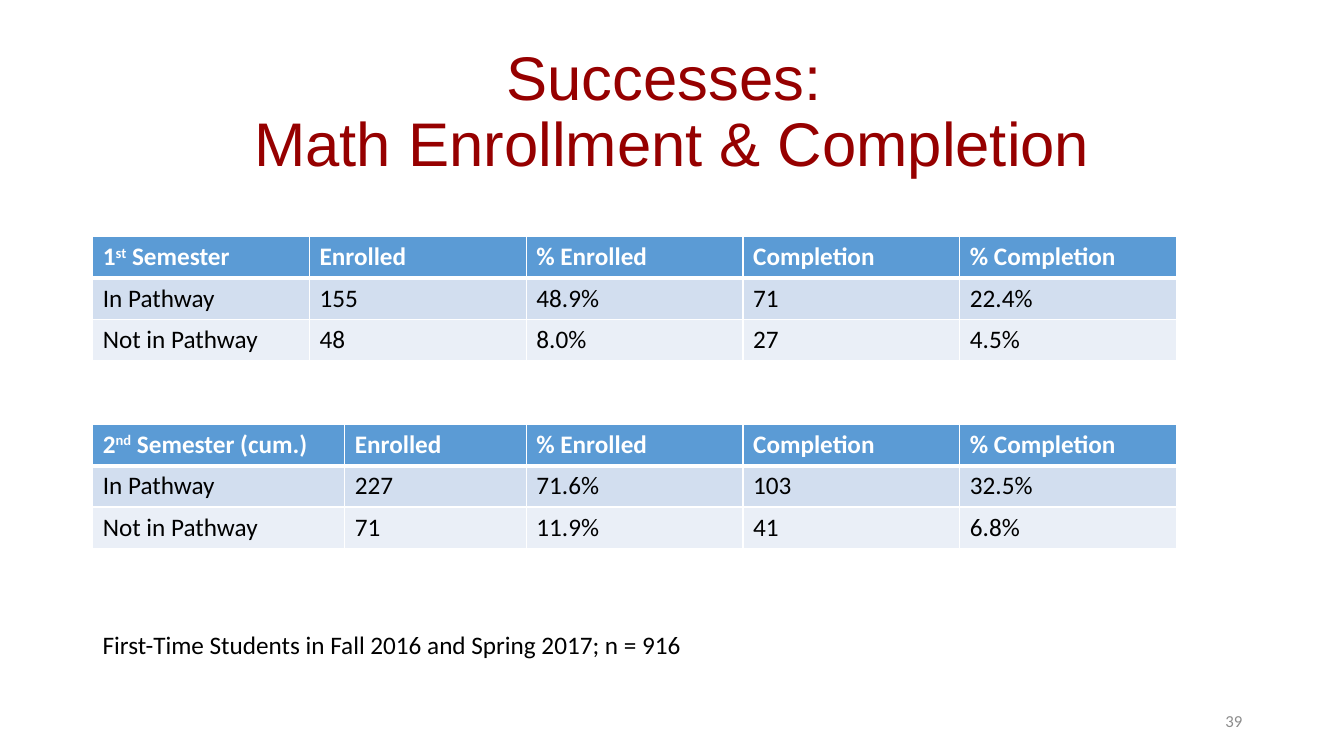
from dataclasses import dataclass

from lxml import etree
from pptx import Presentation
from pptx.dml.color import RGBColor
from pptx.enum import text
from pptx.oxml import ns
from pptx.util import Inches, Pt

COLORS = {
    "title": "960000",
    "head": "5B9BD5",
    "odd": "D2DEEF",
    "even": "EAEFF7",
    "white": "FFFFFF",
    "black": "000000",
    "gray": "8C8C8C",
}
LEFT = 0.92
ROW = 0.41
HEADS = ["Enrolled", "% Enrolled", "Completion", "% Completion"]


@dataclass
class Term:
    label: str
    top: float
    widths: list[float]
    inside: list[str]
    outside: list[str]


@dataclass
class Note:
    words: str
    left: float
    top: float
    width: float
    size: int
    color: str
    align: text.PP_ALIGN
    anchor: text.MSO_ANCHOR


TERMS = [
    Term("1|st| Semester", 2.35, [2.15] * 5,
         ["155", "48.9%", "71", "22.4%"], ["48", "8.0%", "27", "4.5%"]),
    Term("2|nd| Semester (cum.)", 4.21, [2.5, 1.8] + [2.15] * 3,
         ["227", "71.6%", "103", "32.5%"], ["71", "11.9%", "41", "6.8%"]),
]
NOTES = [
    Note("39", 9.42, 6.95, 3, 12, "gray",
         text.PP_ALIGN.RIGHT, text.MSO_ANCHOR.MIDDLE),
    Note("First-Time Students in Fall 2016 and Spring 2017; n = 916",
         LEFT, 6.19, 10.24, 18, "black",
         text.PP_ALIGN.LEFT, text.MSO_ANCHOR.TOP),
]


def style(font, size: int, color: str, name: str = "Calibri", bold: bool = False) -> None:
    font.size = Pt(size)
    font.name = name
    font.bold = bold
    font.color.rgb = RGBColor.from_string(COLORS[color])


def add_edge(cell, side: str, width: float) -> None:
    props = cell._tc.get_or_add_tcPr()
    line = etree.SubElement(props, ns.qn(f"a:ln{side}"), w=str(Pt(width)))
    fill = etree.SubElement(line, ns.qn("a:solidFill"))
    etree.SubElement(fill, ns.qn("a:srgbClr"), val=COLORS["white"])


def fill_cell(cell, words: str, row: int) -> None:
    para = cell.text_frame.paragraphs[0]
    for index, part in enumerate(words.split("|")):
        run = para.add_run()
        run.text = part
        style(run.font, 18, "black" if row else "white", bold=row == 0)
        if index % 2:
            run._r.get_or_add_rPr().set("baseline", "30000")
    thick = {(0, "B"), (1, "T")}
    for side in "LRTB":
        add_edge(cell, side, 3 if (row, side) in thick else 1)
    cell.fill.solid()
    shade = ("head", "odd", "even")[row]
    cell.fill.fore_color.rgb = RGBColor.from_string(COLORS[shade])


def add_term(slide, term: Term) -> None:
    rows = [[term.label] + HEADS,
            ["In Pathway"] + term.inside,
            ["Not in Pathway"] + term.outside]
    table = slide.shapes.add_table(
        len(rows), len(term.widths), Inches(LEFT), Inches(term.top),
        Inches(sum(term.widths)), Inches(ROW * len(rows))).table
    for column, width in zip(table.columns, term.widths):
        column.width = Inches(width)
    for row, values in enumerate(rows):
        table.rows[row].height = Inches(ROW)
        for col, words in enumerate(values):
            fill_cell(table.cell(row, col), words, row)


def add_note(slide, note: Note) -> None:
    box = slide.shapes.add_textbox(
        Inches(note.left), Inches(note.top), Inches(note.width), Inches(0.4))
    frame = box.text_frame
    frame.word_wrap = True
    frame.vertical_anchor = note.anchor
    frame.text = note.words
    para = frame.paragraphs[0]
    para.alignment = note.align
    style(para.runs[0].font, note.size, note.color)


def add_title(slide) -> None:
    title = slide.shapes.title
    title.left, title.top = Inches(LEFT), Inches(0.4)
    title.width, title.height = Inches(11.5), Inches(1.45)
    frame = title.text_frame
    frame.text = "Successes: \vMath Enrollment & Completion"
    frame.auto_size = text.MSO_AUTO_SIZE.NONE
    frame.vertical_anchor = text.MSO_ANCHOR.MIDDLE
    para = frame.paragraphs[0]
    para.alignment = text.PP_ALIGN.CENTER
    para.line_spacing = 0.9
    for run in para.runs:
        style(run.font, 44, "title", "Arial")


def main() -> None:
    deck = Presentation()
    deck.slide_width, deck.slide_height = Inches(13.33), Inches(7.5)
    slide = deck.slides.add_slide(deck.slide_layouts[5])
    add_title(slide)
    for term in TERMS:
        add_term(slide, term)
    for note in NOTES:
        add_note(slide, note)
    deck.save("out.pptx")


if __name__ == "__main__":
    main()
